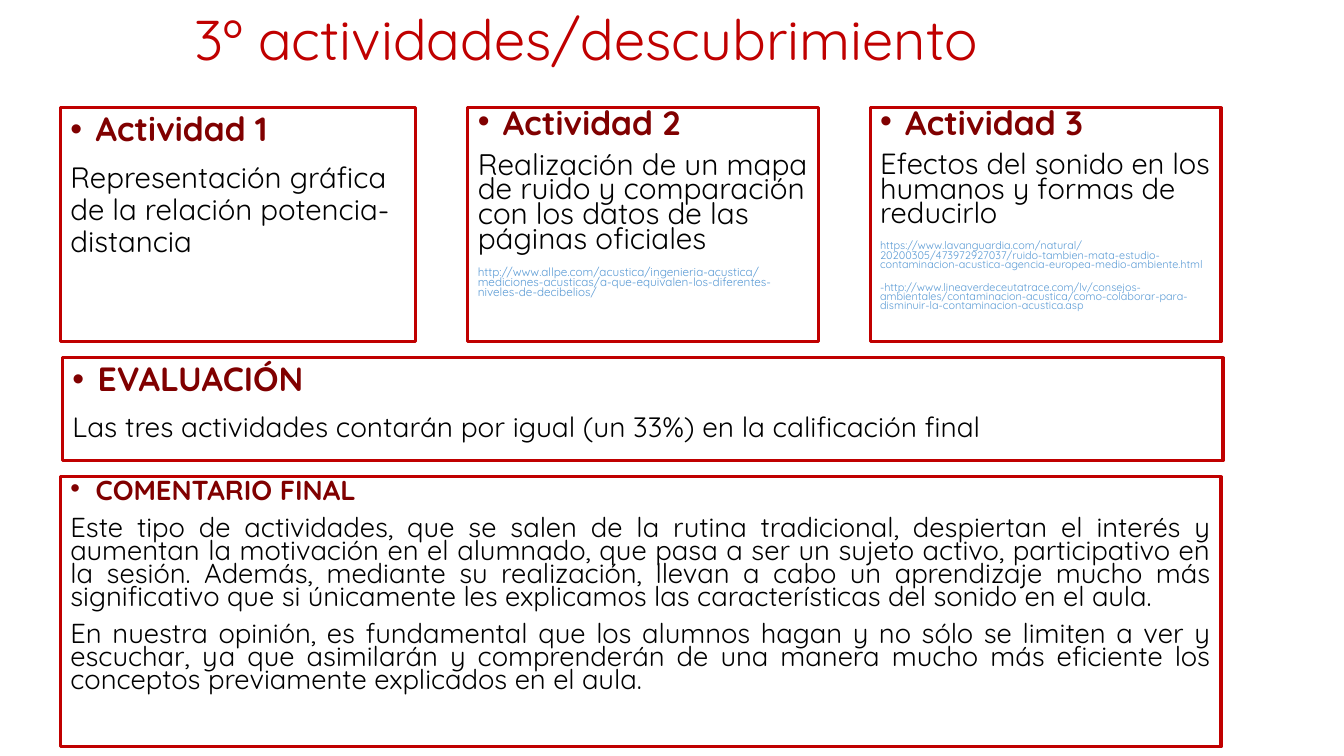
from pptx import Presentation
from pptx.dml.color import RGBColor
from pptx.enum.shapes import MSO_SHAPE
from pptx.enum.text import MSO_ANCHOR, PP_ALIGN
from pptx.oxml.ns import qn
from pptx.util import Inches, Pt
from lxml import etree

RECTANGLE = MSO_SHAPE.RECTANGLE
TOP, MIDDLE = MSO_ANCHOR.TOP, MSO_ANCHOR.MIDDLE
LEFT, JUSTIFY = PP_ALIGN.LEFT, PP_ALIGN.JUSTIFY

RED = RGBColor(0xC0, 0x00, 0x00)
MAROON = RGBColor(0x80, 0x00, 0x00)
BLACK = RGBColor(0x00, 0x00, 0x00)
LINK_BLUE = RGBColor(0x5B, 0x9B, 0xD5)
FONT = "Quicksand"

TITLE = "3º actividades/descubrimiento"
CARD_TOP, CARD_HEIGHT = 1.07, 2.32

PANELS = [
    {
        "area": (0.6, CARD_TOP, 3.52, CARD_HEIGHT),
        "spacing": 0.9,
        "heading": ("Actividad 1", 24),
        "body": [("Representación gráfica de la relación potencia-distancia", 21, BLACK)],
    },
    {
        "area": (4.64, CARD_TOP, 3.48, CARD_HEIGHT),
        "spacing": 0.7,
        "heading": ("Actividad 2", 24),
        "body": [
            ("Realización de un mapa de ruido y comparación con los datos de las páginas oficiales", 21.2, BLACK),
            ("http://www.allpe.com/acustica/ingenieria-acustica/mediciones-acusticas/"
             "a-que-equivalen-los-diferentes-niveles-de-decibelios/", 8.4, LINK_BLUE),
        ],
    },
    {
        "area": (8.63, CARD_TOP, 3.48, CARD_HEIGHT),
        "spacing": 0.7,
        "heading": ("Actividad 3", 24.1),
        "body": [
            ("Efectos del sonido en los humanos y formas de reducirlo", 20.8, BLACK),
            ("https://www.lavanguardia.com/natural/20200305/473972927037/"
             "ruido-tambien-mata-estudio-contaminacion-acustica-agencia-europea-medio-ambiente.html",
             7.8, LINK_BLUE),
            ("-http://www.lineaverdeceutatrace.com/lv/consejos-ambientales/contaminacion-acustica/"
             "como-colaborar-para-disminuir-la-contaminacion-acustica.asp", 7.8, LINK_BLUE),
        ],
    },
    {
        "area": (0.62, 3.55, 11.51, 1.02),
        "spacing": 0.9,
        "heading": ("EVALUACIÓN", 24),
        "body": [("Las tres actividades contarán por igual (un 33%) en la calificación final", 20, BLACK)],
    },
    {
        "area": (0.6, 4.73, 11.51, 2.68),
        "spacing": 0.7,
        "align": JUSTIFY,
        "heading": ("COMENTARIO FINAL", 19.6),
        "body": [
            ("Este tipo de actividades, que se salen de la rutina tradicional, despiertan el interés y "
             "aumentan la motivación en el alumnado, que pasa a ser un sujeto activo, participativo en "
             "la sesión. Además, mediante su realización, llevan a cabo un aprendizaje mucho más "
             "significativo que si únicamente les explicamos las características del sonido en el aula.",
             19.6, BLACK),
            ("En nuestra opinión, es fundamental que los alumnos hagan y no sólo se limiten a ver y "
             "escuchar, ya que asimilarán y comprenderán de una manera mucho más eficiente los "
             "conceptos previamente explicados en el aula.", 19.6, BLACK),
        ],
    },
]


def add_bullet(para):
    properties = para._p.get_or_add_pPr()
    properties.set("marL", str(Inches(0.25)))
    properties.set("indent", str(-Inches(0.25)))
    etree.SubElement(properties, qn("a:buFont")).set("typeface", "Arial")
    etree.SubElement(properties, qn("a:buChar")).set("char", "•")


def style(para, text, size, color, spacing, align=LEFT, bold=False):
    para.text = text
    para.alignment = align
    para.line_spacing = spacing
    para.font.name = FONT
    para.font.size = Pt(size)
    para.font.bold = bold
    para.font.color.rgb = color


def add_title(page):
    box = page.shapes.add_textbox(*map(Inches, (1.83, -0.06, 11.5, 0.97)))
    frame = box.text_frame
    frame.word_wrap = True
    frame.vertical_anchor = MIDDLE
    style(frame.paragraphs[0], TITLE, 40, RED, 0.9)


def add_panel(page, panel):
    box = page.shapes.add_shape(RECTANGLE, *map(Inches, panel["area"]))
    box.shadow.inherit = False
    box.fill.background()
    box.line.color.rgb = RED
    box.line.width = Pt(2.25)
    frame = box.text_frame
    frame.word_wrap = True
    frame.vertical_anchor = TOP
    heading = frame.paragraphs[0]
    add_bullet(heading)
    style(heading, *panel["heading"], MAROON, panel["spacing"], bold=True)
    for text, size, color in panel["body"]:
        para = frame.add_paragraph()
        style(para, text, size, color, panel["spacing"], panel.get("align", LEFT))
        para.space_before = Pt(10)


def main():
    deck = Presentation()
    deck.slide_width, deck.slide_height = Inches(13.33), Inches(7.5)
    page = deck.slides.add_slide(deck.slide_layouts[6])
    add_title(page)
    for panel in PANELS:
        add_panel(page, panel)
    deck.save("out.pptx")


if __name__ == "__main__":
    main()
